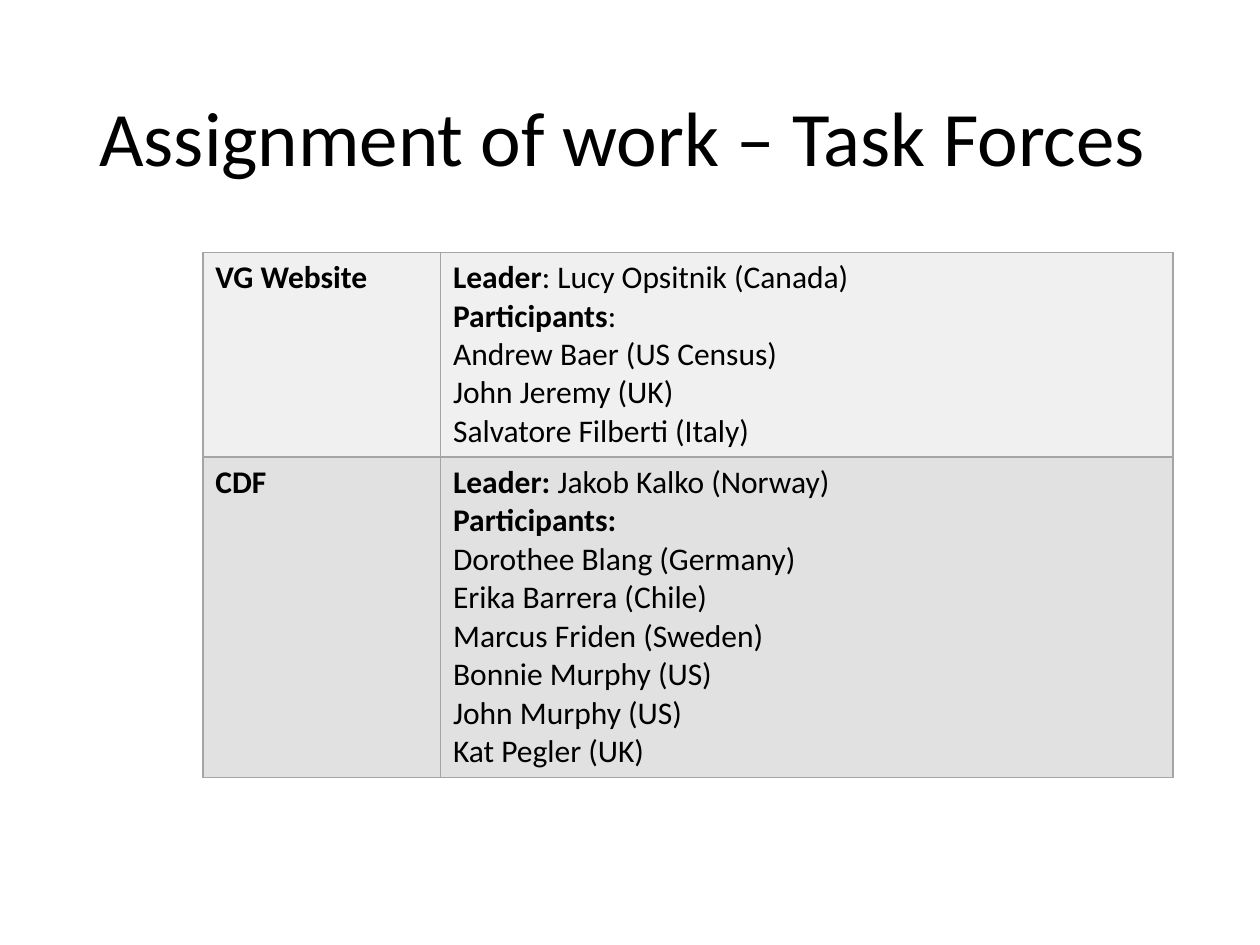
from lxml import etree
from pptx import Presentation
from pptx.dml.color import RGBColor
from pptx.enum.text import MSO_ANCHOR, PP_ALIGN
from pptx.oxml.ns import qn
from pptx.util import Inches, Pt

LEFT = PP_ALIGN.LEFT
MIDDLE = MSO_ANCHOR.MIDDLE
BLACK = RGBColor(0x00, 0x00, 0x00)
BORDER_GREY = RGBColor(0xA5, 0xA5, 0xA5)
BAND_FILLS = (RGBColor(0xF0, 0xF0, 0xF0), RGBColor(0xE1, 0xE1, 0xE1))

FONT = "Calibri"
SLIDE_WIDTH, SLIDE_HEIGHT = Inches(10), Inches(7.5)
TITLE_BOX = (0.069, 0.053, 0.862, 0.193)
TABLE_BOX = (0.161, 0.267, 0.77, 0.556)
COLUMN_SHARES = (0.245, 0.755)
ROW_SHARES = (0.39, 0.61)

TASK_FORCES = [
    ("VG Website", [
        ("Leader", ": Lucy Opsitnik (Canada)"),
        ("Participants", ":"),
        ("", "Andrew Baer (US Census)"),
        ("", "John Jeremy (UK)"),
        ("", "Salvatore Filberti (Italy)"),
    ]),
    ("CDF", [
        ("Leader: ", "Jakob Kalko (Norway)"),
        ("Participants:", ""),
        ("", "Dorothee Blang (Germany)"),
        ("", "Erika Barrera (Chile)"),
        ("", "Marcus Friden (Sweden)"),
        ("", "Bonnie Murphy (US)"),
        ("", "John Murphy (US)"),
        ("", "Kat Pegler (UK)"),
    ]),
]


def place(box):
    """Turn shares of the slide into left, top, width and height."""
    sides = (SLIDE_WIDTH, SLIDE_HEIGHT) * 2
    return [int(share * side) for share, side in zip(box, sides)]


def add_run(paragraph, text, size, bold=False):
    """Append a black run to a paragraph."""
    run = paragraph.add_run()
    run.text = text
    run.font.color.rgb = BLACK
    for name, value in {"name": FONT, "size": Pt(size), "bold": bold}.items():
        setattr(run.font, name, value)


def add_title(slide, box, wording):
    """Place the slide heading, centred vertically in its box."""
    frame = slide.shapes.add_textbox(*place(box)).text_frame
    for name, value in {"word_wrap": True, "vertical_anchor": MIDDLE}.items():
        setattr(frame, name, value)
    heading = frame.paragraphs[0]
    for name, value in {"alignment": LEFT, "line_spacing": 0.9}.items():
        setattr(heading, name, value)
    add_run(heading, wording, 44)


def add_borders(cell):
    """Draw a thin grey line on all four sides of a cell."""
    properties = cell._tc.get_or_add_tcPr()
    for position, side in enumerate(("a:lnL", "a:lnR", "a:lnT", "a:lnB")):
        line = etree.Element(qn(side), w=str(Pt(1)))
        fill = etree.SubElement(line, qn("a:solidFill"))
        etree.SubElement(fill, qn("a:srgbClr"), val=str(BORDER_GREY))
        properties.insert(position, line)


def fill_cell(cell, lines, band):
    """Write lines of bold and plain text into a bordered, shaded cell."""
    cell.fill.solid()
    cell.fill.fore_color.rgb = band
    add_borders(cell)
    frame = cell.text_frame
    for number, (label, detail) in enumerate(lines):
        paragraph = frame.add_paragraph() if number else frame.paragraphs[0]
        for text, bold in ((label, True), (detail, False)):
            if text:
                add_run(paragraph, text, 18, bold)


def add_task_force_table(slide, box, task_forces):
    """Place the table of task forces with their members."""
    left, top, width, height = place(box)
    table = slide.shapes.add_table(
        len(task_forces), len(COLUMN_SHARES), left, top, width, height).table
    table.first_row = False
    for column, share in zip(table.columns, COLUMN_SHARES):
        column.width = int(width * share)
    for row, share, band, (force, members) in zip(
            table.rows, ROW_SHARES, BAND_FILLS, task_forces):
        row.height = int(height * share)
        fill_cell(row.cells[0], [(force, "")], band)
        fill_cell(row.cells[1], members, band)


def main():
    """Build and save the slide."""
    deck = Presentation()
    deck.slide_width, deck.slide_height = SLIDE_WIDTH, SLIDE_HEIGHT
    slide = deck.slides.add_slide(deck.slide_layouts[6])
    add_title(slide, TITLE_BOX, "Assignment of work – Task Forces")
    add_task_force_table(slide, TABLE_BOX, TASK_FORCES)
    deck.save("out.pptx")


if __name__ == "__main__":
    main()
